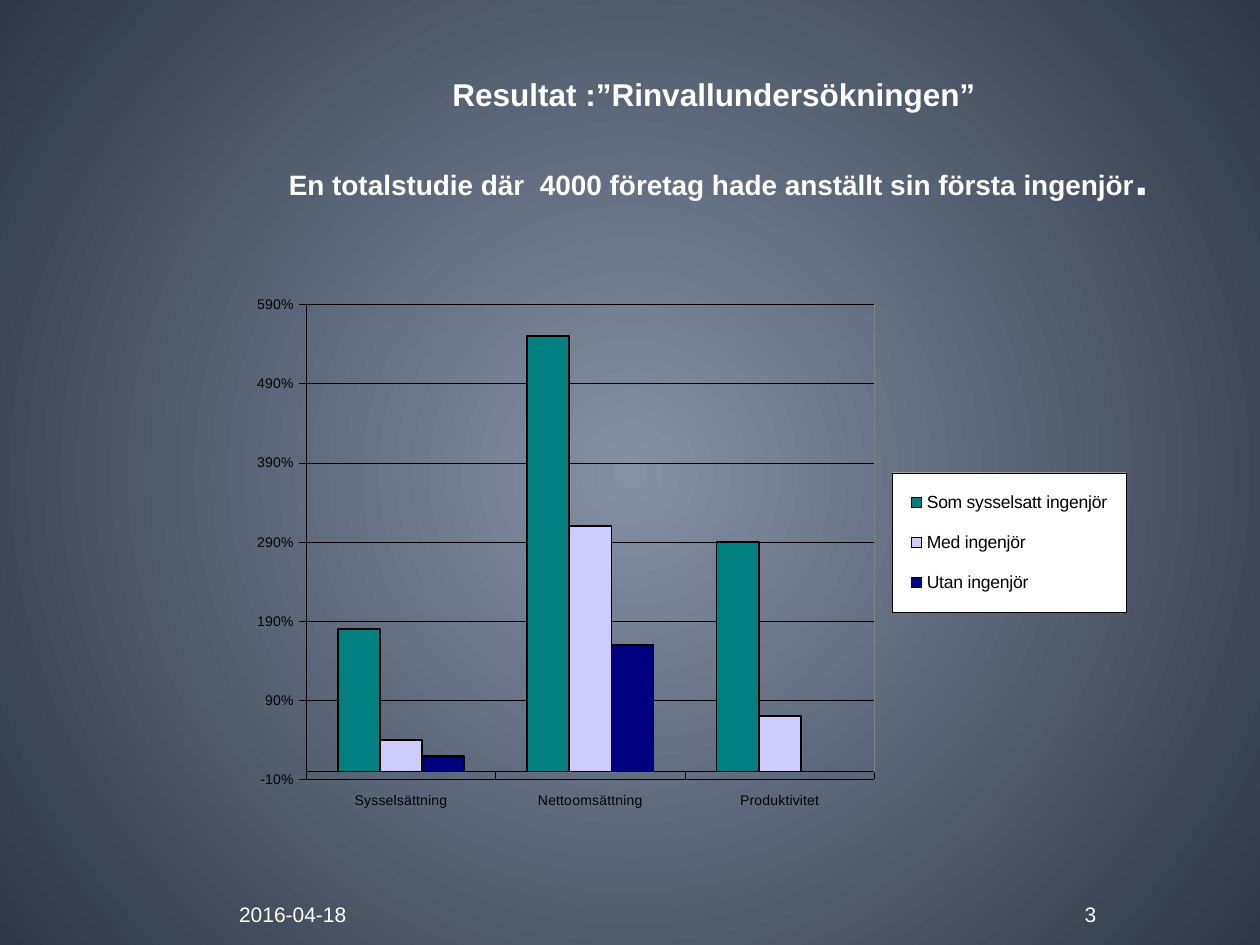
from pptx import Presentation
from pptx.chart.data import CategoryChartData as Data
from pptx.dml.color import RGBColor as Rgb
from pptx.enum.chart import XL_CHART_TYPE as Kind, XL_LEGEND_POSITION as Side
from pptx.enum.chart import XL_TICK_LABEL_POSITION as Label, XL_TICK_MARK as Tick
from pptx.enum.text import MSO_ANCHOR as Anchor, PP_ALIGN as Align
from pptx.oxml import parse_xml
from pptx.oxml.ns import nsdecls, qn
from pptx.util import Cm, Pt

THEME = {
    "font": "Arial", "text": "FFFFFF", "ink": "000000", "paper": "FFFFFF",
    "frame": "808080", "back": ("8590A4", "2D3747"),
    "bars": ("008080", "CCCCFF", "000080"),
    "head": 18, "sub": 16, "dot": 28, "foot": 12, "axis": 8, "key": 10,
}

TEXTS = [
    {"at": (4.45, 0.33, 20.07, 5), "align": Align.CENTER, "gap": 19, "paras": [
        [("Resultat :”Rinvallundersökningen” ", "head", True)],
        [("En totalstudie där  4000 företag hade anställt sin första ingenjör", "sub", True),
         (".", "dot", True)]]},
    {"at": (4.57, 17.91, 2.92, 1.02), "align": Align.LEFT, "gap": 0,
     "paras": [[("2016-04-18", "foot", False)]]},
    {"at": (20.7, 17.91, 1.65, 1.02), "align": Align.RIGHT, "gap": 0,
     "paras": [[("3", "foot", False)]]},
]

CATS = ["Sysselsättning", "Nettoomsättning", "Produktivitet"]
SERIES = [
    ("Som sysselsatt ingenjör", (1.8, 5.5, 2.9)),
    ("Med ingenjör", (0.4, 3.1, 0.7)),
    ("Utan ingenjör", (0.2, 1.6, 0)),
]
CHART = (4.7, 4.93, 18.01, 12.57)
PLOT = (8.2, 9.6, 63.6, 76.2)
KEY = (73.8, 36.6, 26.2, 22.4)


def color(name):
    """Return a theme colour."""
    return Rgb.from_string(THEME[name])


def style(font, size, tone):
    """Set the typeface, size and colour of a font."""
    font.name = THEME["font"]
    font.size = Pt(THEME[size])
    font.color.rgb = color(tone)


def stroke(line, width):
    """Draw a line in ink."""
    line.color.rgb = color("ink")
    line.width = Pt(width)


def paint(slide):
    """Fill the background with a round gradient."""
    fill = slide.background.fill
    fill.gradient()
    for stop, tone in zip(fill.gradient_stops, THEME["back"]):
        stop.color.rgb = Rgb.from_string(tone)
    grad = slide.element.find(".//" + qn("a:gradFill"))
    grad.replace(grad.find(qn("a:lin")), parse_xml(
        f'<a:path {nsdecls("a")} path="circle">'
        '<a:fillToRect l="50000" t="50000" r="50000" b="50000"/></a:path>'))


def write(slide, item):
    """Add a text box run by run."""
    frame = slide.shapes.add_textbox(*map(Cm, item["at"])).text_frame
    frame.word_wrap = True
    frame.vertical_anchor = Anchor.MIDDLE
    for i, runs in enumerate(item["paras"]):
        para = frame.add_paragraph() if i else frame.paragraphs[0]
        para.alignment = item["align"]
        if i:
            para.space_before = Pt(item["gap"])
        for text, size, bold in runs:
            run = para.add_run()
            run.text = text
            run.font.bold = bold
            style(run.font, size, "text")


def layout(box, inner=False):
    """Return a manual layout for a chart part, given in percent."""
    goal = '<c:layoutTarget val="inner"/>' if inner else ""
    modes = "".join(f'<c:{k}Mode val="edge"/>' for k in "xy")
    sizes = "".join(f'<c:{k} val="{v / 100:.3f}"/>' for k, v in zip("xywh", box))
    return parse_xml(f'<c:layout {nsdecls("c")}><c:manualLayout>{goal}{modes}{sizes}'
                     '</c:manualLayout></c:layout>')


def border(fill, tone):
    """Return a fill and thin outline for a chart part."""
    body = f'<a:solidFill><a:srgbClr val="{THEME[fill]}"/></a:solidFill>' if fill else "<a:noFill/>"
    return parse_xml(f'<c:spPr {nsdecls("c", "a")}>{body}<a:ln w="3175"><a:solidFill>'
                     f'<a:srgbClr val="{THEME[tone]}"/></a:solidFill></a:ln></c:spPr>')


def clear(part):
    """Drop any layout a chart part has."""
    for old in part.findall(qn("c:layout")):
        part.remove(old)


def plot(slide):
    """Add the column chart with its axes and legend."""
    data = Data(number_format="0%")
    data.categories = CATS
    for name, vals in SERIES:
        data.add_series(name, vals)
    chart = slide.shapes.add_chart(Kind.COLUMN_CLUSTERED, *map(Cm, CHART), data).chart
    chart.has_title = False
    style(chart.font, "axis", "ink")

    cols = chart.plots[0]
    cols.vary_by_categories = False
    cols.gap_width = 150
    cols.overlap = 0
    for bar, tone in zip(cols.series, THEME["bars"]):
        bar.invert_if_negative = False
        bar.format.fill.solid()
        bar.format.fill.fore_color.rgb = Rgb.from_string(tone)
        stroke(bar.format.line, 1)

    for axis in (chart.category_axis, chart.value_axis):
        axis.major_tick_mark = Tick.OUTSIDE
        axis.minor_tick_mark = Tick.NONE
        axis.tick_label_position = Label.LOW
        style(axis.tick_labels.font, "axis", "ink")
        stroke(axis.format.line, 0.25)
    chart.category_axis.tick_labels.offset = 0
    axis.minimum_scale, axis.maximum_scale, axis.major_unit = -0.1, 5.9, 1
    axis.tick_labels.number_format = "0%"
    axis.tick_labels.number_format_is_linked = False
    axis.has_major_gridlines = True
    stroke(axis.major_gridlines.format.line, 0.25)

    chart.has_legend = True
    key = chart.legend
    key.position = Side.RIGHT
    key.include_in_layout = False
    style(key.font, "key", "ink")
    root = chart.element
    part = root.find(".//" + qn("c:legend"))
    clear(part)
    part.find(qn("c:legendPos")).addnext(layout(KEY))
    part.find(qn("c:txPr")).addprevious(border("paper", "ink"))
    area = root.find(".//" + qn("c:plotArea"))
    clear(area)
    area.insert(0, layout(PLOT, True))
    area.append(border(None, "frame"))


def main():
    """Build and save the slide."""
    deck = Presentation()
    deck.slide_width, deck.slide_height = Cm(25.4), Cm(19.05)
    slide = deck.slides.add_slide(deck.slide_layouts[6])
    paint(slide)
    for item in TEXTS:
        write(slide, item)
    plot(slide)
    deck.save("out.pptx")


if __name__ == "__main__":
    main()
